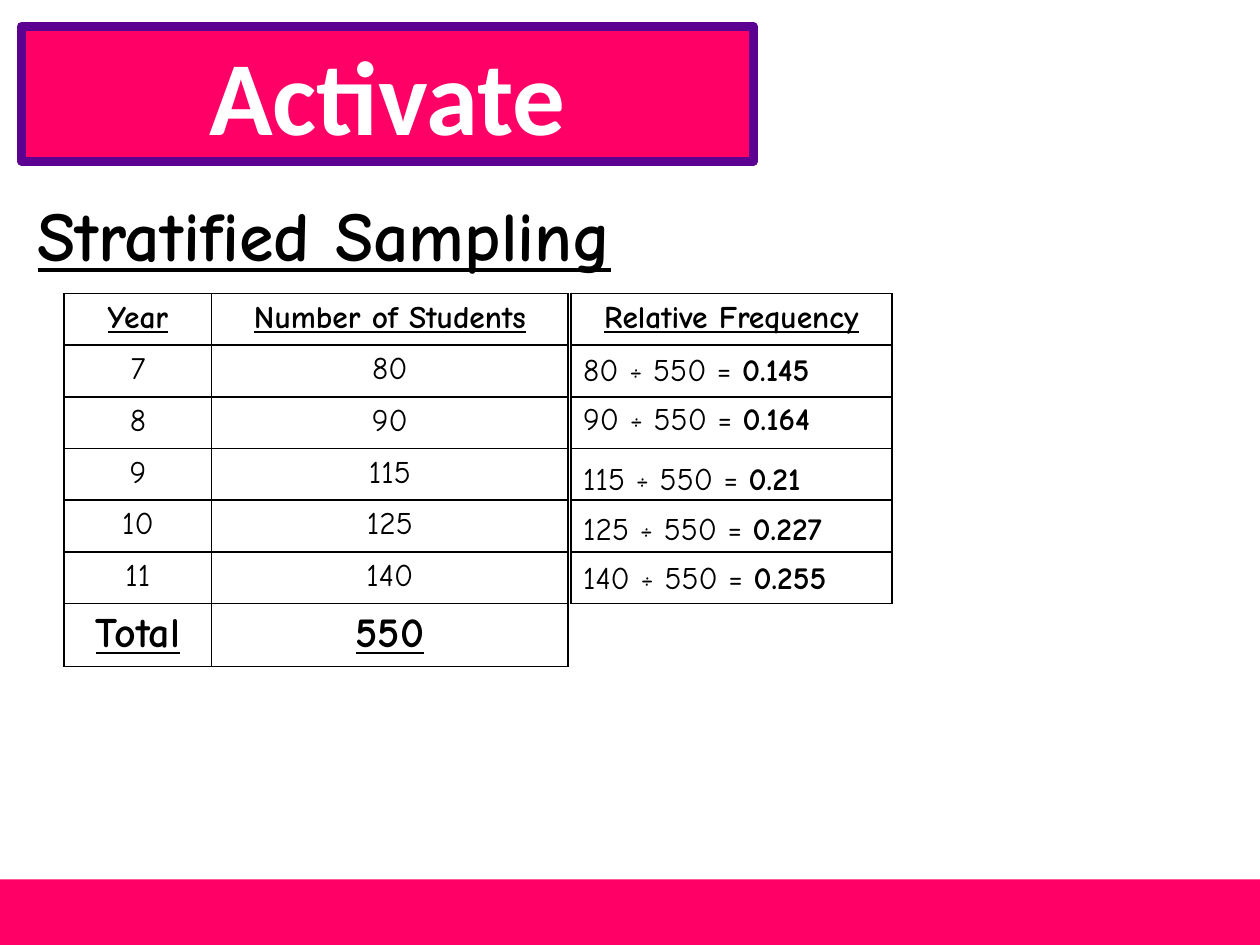
from lxml import etree
from pptx import Presentation
from pptx.dml.color import RGBColor
from pptx.enum.shapes import MSO_SHAPE
from pptx.enum.text import MSO_ANCHOR, MSO_AUTO_SIZE, PP_ALIGN
from pptx.oxml import parse_xml
from pptx.oxml.ns import nsdecls, qn
from pptx.util import Inches, Pt

PINK = RGBColor(0xFF, 0x00, 0x66)
PURPLE = RGBColor(0x5B, 0x00, 0x91)
WHITE = RGBColor(0xFF, 0xFF, 0xFF)
BLACK = RGBColor(0x00, 0x00, 0x00)
CENTER = PP_ALIGN.CENTER
MIDDLE = MSO_ANCHOR.MIDDLE
NO_AUTOFIT = MSO_AUTO_SIZE.NONE
GROW = MSO_AUTO_SIZE.SHAPE_TO_FIT_TEXT
RECTANGLE = MSO_SHAPE.RECTANGLE
BODY_FONT = "Comic Neue"

TABLE_TOP = 2.33
ROW_HEIGHT = 0.41
FREQUENCY_LEFT = 4.53
STUDENTS = [
    ("Year", "Number of Students"),
    ("7", "80"),
    ("8", "90"),
    ("9", "115"),
    ("10", "125"),
    ("11", "140"),
    ("Total", "550"),
]
FREQUENCIES = [
    ("80", "0.145", 2.73),
    ("90", "0.164", 3.12),
    ("115", "0.21", 3.59),
    ("125", "0.227", 3.99),
    ("140", "0.255", 4.38),
]


def style_run(run, size, bold=False, underline=False, color=BLACK, name=BODY_FONT):
    run.font.size = Pt(size)
    run.font.bold = bold
    run.font.underline = underline
    run.font.color.rgb = color
    run.font.name = name


def add_title(slide, text):
    title = slide.shapes.title
    title.left, title.top = Inches(0.17), Inches(0.21)
    title.width, title.height = Inches(5.81), Inches(1.07)
    outline = parse_xml(
        f'<a:prstGeom {nsdecls("a")} prst="roundRect"><a:avLst>'
        '<a:gd name="adj" fmla="val 436"/></a:avLst></a:prstGeom>'
    )
    title.element.spPr.find(qn("a:xfrm")).addnext(outline)
    title.fill.solid()
    title.fill.fore_color.rgb = PINK
    title.line.color.rgb = PURPLE
    title.line.width = Pt(5)
    frame = title.text_frame
    frame.text = text
    frame.auto_size = NO_AUTOFIT
    frame.vertical_anchor = MIDDLE
    frame.paragraphs[0].alignment = CENTER
    style_run(frame.paragraphs[0].runs[0], 60, bold=True, color=WHITE, name="Calibri")


def add_footer_band(slide):
    band = slide.shapes.add_shape(
        RECTANGLE, Inches(0), Inches(6.98), Inches(10), Inches(0.52)
    )
    band.shadow.inherit = False
    band.fill.solid()
    band.fill.fore_color.rgb = PINK
    band.line.fill.background()


def add_text(slide, left, top, width, height):
    box = slide.shapes.add_textbox(
        Inches(left), Inches(top), Inches(width), Inches(height)
    )
    box.text_frame.word_wrap = True
    box.text_frame.auto_size = GROW
    return box.text_frame.paragraphs[0]


def add_heading(slide, text):
    heading = add_text(slide, 0.2, 1.47, 6.02, 0.77)
    heading.text = text
    style_run(heading.runs[0], 40, bold=True, underline=True)


def add_frequency(slide, count, frequency, top):
    working = add_text(slide, FREQUENCY_LEFT, top, 2.44, 0.4)
    for text, bold in ((f"{count} ÷ 550 = ", False), (frequency, True)):
        run = working.add_run()
        run.text = text
        style_run(run, 18, bold=bold)


def border_cell(cell):
    properties = cell._tc.get_or_add_tcPr()
    for position, side in enumerate(("lnL", "lnR", "lnT", "lnB")):
        border = etree.Element(qn(f"a:{side}"), w=str(Pt(1)))
        fill = etree.SubElement(border, qn("a:solidFill"))
        etree.SubElement(fill, qn("a:srgbClr"), val=str(BLACK))
        properties.insert(position, border)


def add_grid(slide, left, widths, rows, cell_fill=None):
    grid = slide.shapes.add_table(
        len(rows), len(widths), Inches(left), Inches(TABLE_TOP),
        Inches(sum(widths)), Inches(ROW_HEIGHT * len(rows)),
    ).table
    grid.first_row = False
    grid.horz_banding = False
    for column, width in zip(grid.columns, widths):
        column.width = Inches(width)
    for row, values in enumerate(rows):
        grid.rows[row].height = Inches(ROW_HEIGHT)
        is_total = values[0] == "Total"
        emphasis = row == 0 or is_total
        for column, value in enumerate(values):
            cell = grid.cell(row, column)
            if cell_fill is None:
                cell.fill.background()
            else:
                cell.fill.solid()
                cell.fill.fore_color.rgb = cell_fill
            border_cell(cell)
            if value:
                paragraph = cell.text_frame.paragraphs[0]
                paragraph.text = value
                paragraph.alignment = CENTER
                style_run(paragraph.runs[0], 24 if is_total else 18, emphasis, emphasis)


def main():
    deck = Presentation()
    deck.slide_width, deck.slide_height = Inches(10), Inches(7.5)
    slide = deck.slides.add_slide(deck.slide_layouts[5])
    add_title(slide, "Activate")
    add_footer_band(slide)
    add_heading(slide, "Stratified Sampling")
    add_grid(slide, 0.51, [1.17, 2.83], STUDENTS, WHITE)
    frequency_rows = [("Relative Frequency",)] + [("",)] * len(FREQUENCIES)
    add_grid(slide, FREQUENCY_LEFT, [2.55], frequency_rows)
    for count, frequency, top in FREQUENCIES:
        add_frequency(slide, count, frequency, top)
    deck.save("out.pptx")


if __name__ == "__main__":
    main()
